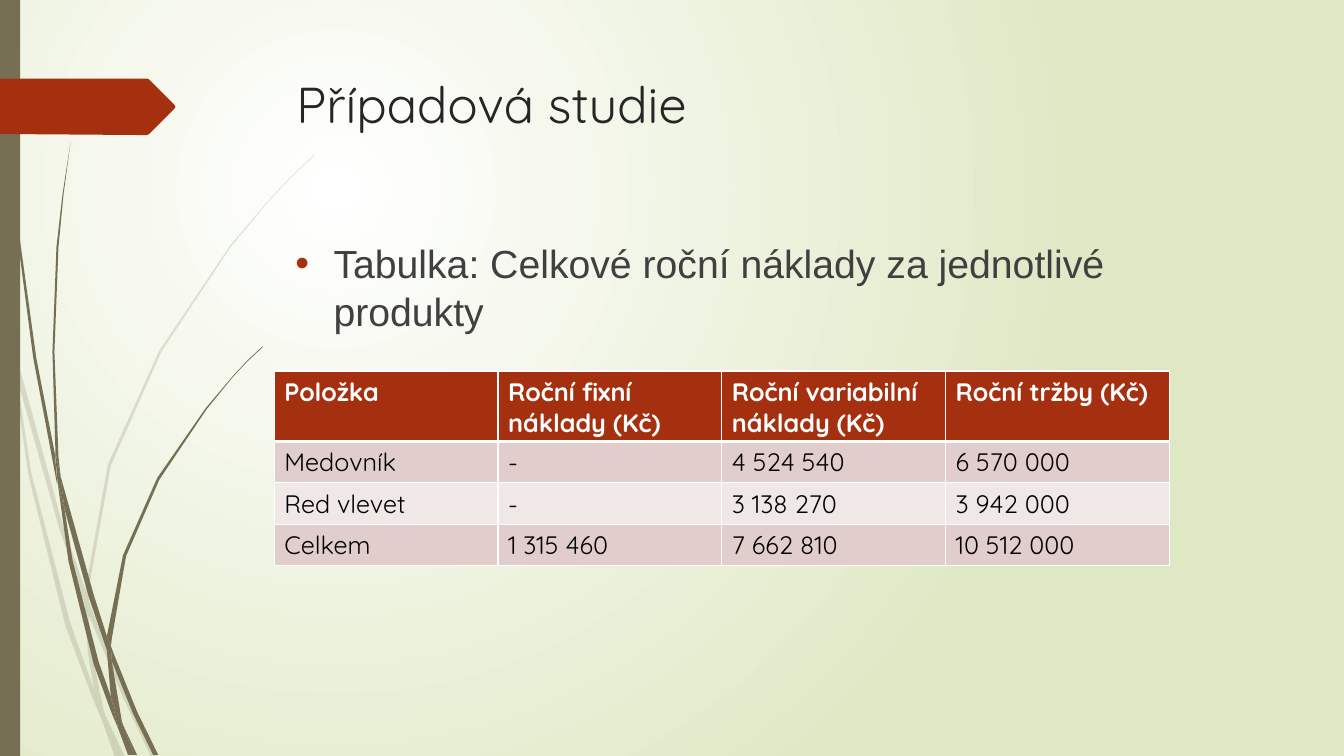
"""Build the case study slide with its yearly cost table."""
from dataclasses import dataclass
from typing import Any

from lxml import etree
from pptx import Presentation
from pptx.dml.color import RGBColor
from pptx.enum import shapes, text
from pptx.oxml import ns
from pptx.util import Emu, Pt

PX = 9144
WHITE = RGBColor(0xFF, 0xFF, 0xFF)
BLACK = RGBColor(0x00, 0x00, 0x00)
LIME = RGBColor(0xDF, 0xE8, 0xC4)
OLIVE = RGBColor(0x76, 0x6F, 0x54)
RUST = RGBColor(0xA5, 0x30, 0x10)
TITLE_GREY = RGBColor(0x26, 0x26, 0x26)
BODY_GREY = RGBColor(0x40, 0x40, 0x40)
ROSE = RGBColor(0xE1, 0xCD, 0xCC)
PALE_ROSE = RGBColor(0xF0, 0xE8, 0xE7)

Points = list[tuple[int, int]]


@dataclass(frozen=True)
class Wisp:
    """A tuft of grass blades sharing one opacity in percent."""
    opacity: int
    blades: list[Points]


@dataclass(frozen=True)
class Label:
    """A text box in px with its font values."""
    left: int
    top: int
    width: int
    height: int
    words: str
    font: dict[str, Any]
    bullet: bool = False


FAINT = Wisp(20, [
    [(11, 350), (9, 322), (0, 282), (0, 299), (10, 344)],
    [(58, 522), (84, 599), (85, 586), (62, 520), (14, 345), (17, 376)],
    [(92, 607), (88, 596), (88, 610), (123, 694), (150, 751), (155, 751), (127, 692)],
    [(119, 751), (124, 751), (105, 711)],
    [(93, 683), (70, 619), (31, 469), (17, 376), (11, 350), (28, 470), (65, 621),
     (92, 693), (101, 714), (99, 707)],
    [(84, 599), (87, 646), (93, 683), (96, 692), (105, 711), (103, 706), (91, 646),
     (88, 610), (88, 608)],
    [(88, 584), (110, 462), (160, 349), (229, 245), (268, 198), (290, 175), (312, 154),
     (312, 153), (289, 175), (268, 197), (228, 244), (158, 348), (107, 461), (85, 584),
     (85, 586), (88, 596)],
    [(101, 714), (114, 751), (119, 751)],
    [(88, 608), (88, 610), (88, 596), (85, 586), (84, 599)],
    [(96, 692), (93, 683), (99, 707), (101, 714), (119, 751), (105, 711)],
])
STRONG = Wisp(100, [
    [(7, 110), (17, 233), (33, 355), (56, 477), (57, 481), (55, 457), (55, 453),
     (36, 355), (19, 232), (8, 109), (5, 48), (4, 0), (3, 0), (4, 48)],
    [(88, 592), (106, 645), (106, 633), (106, 631), (93, 590), (60, 472), (64, 505)],
    [(113, 649), (110, 641), (111, 656), (132, 708), (152, 749), (157, 749), (136, 706)],
    [(110, 691), (98, 657), (72, 556), (64, 505), (57, 477), (68, 557), (93, 659),
     (111, 708), (117, 722), (116, 717)],
    [(60, 472), (58, 453), (54, 349), (58, 245), (63, 193), (70, 141), (62, 193),
     (56, 245), (52, 349), (55, 449)],
    [(133, 749), (136, 749), (122, 719)],
    [(57, 477), (64, 505), (60, 472), (55, 449), (55, 453)],
    [(111, 633), (125, 552), (158, 476), (205, 406), (231, 374), (245, 359), (261, 344),
     (260, 344), (245, 358), (231, 373), (204, 405), (156, 474), (122, 551), (106, 631),
     (110, 641)],
    [(117, 722), (127, 749), (131, 749)],
    [(106, 645), (110, 691), (116, 706), (122, 719), (121, 716), (111, 656), (109, 651)],
    [(106, 645), (109, 651), (111, 656), (110, 641), (106, 631), (106, 633)],
    [(116, 706), (110, 691), (116, 717), (117, 722), (130, 749), (133, 749), (122, 719)],
])
ARROW: Points = [(173, 108), (148, 133), (146, 134), (136, 134), (0, 133), (0, 78),
                 (146, 78), (148, 79), (173, 104), (174, 106)]

LABELS = [
    Label(284, 68, 975, 140, "Případová studie",
          {"name": "Quicksand", "size": Pt(36)}),
    Label(283, 233, 975, 413, "Tabulka: Celkové roční náklady za jednotlivé produkty",
          {"name": "Arial", "size": Pt(28)}, bullet=True),
]
COSTS = [
    ["Položka", "Roční fixní náklady (Kč)", "Roční variabilní náklady (Kč)",
     "Roční tržby (Kč)"],
    ["Medovník", "-", "4 524 540", "6 570 000"],
    ["Red vlevet", "-", "3 138 270", "3 942 000"],
    ["Celkem", "1 315 460", "7 662 810", "10 512 000"],
]


def px(*lengths: int) -> list[Emu]:
    """Turn px lengths into EMU."""
    return [Emu(n * PX) for n in lengths]


def add_node(parent: Any, tag: str, **attrs: Any) -> Any:
    """Append a DrawingML element and return it."""
    return etree.SubElement(parent, ns.qn(tag), {k: str(v) for k, v in attrs.items()})


def paint(sp: Any, colour: RGBColor, opacity: int = 100) -> None:
    """Give a shape a plain fill without line or shadow."""
    sp.shadow.inherit = False
    sp.fill.solid()
    sp.fill.fore_color.rgb = colour
    sp.line.fill.background()
    if opacity < 100:
        srgb = sp.element.spPr.find(f".//{ns.qn('a:srgbClr')}")
        add_node(srgb, "a:alpha", val=opacity * 1000)


def add_outline(target: Any, points: Points) -> Any:
    """Draw a closed outline through px points."""
    builder = target.build_freeform(*points[0], scale=PX)
    builder.add_line_segments(points[1:], close=True)
    return builder.convert_to_shape()


def set_font(font: Any, values: dict[str, Any], colour: RGBColor) -> None:
    """Apply font values and a colour."""
    for name, value in values.items():
        setattr(font, name, value)
    font.color.rgb = colour


def add_background(s: Any) -> None:
    """Fill the background with a radial gradient."""
    fill = s.background.fill
    fill.gradient()
    for stop, position, colour in zip(fill.gradient_stops, (0, 1), (WHITE, LIME)):
        stop.position = position
        stop.color.rgb = colour
    lin = s.element.find(f".//{ns.qn('a:lin')}")
    grad = lin.getparent()
    grad.remove(lin)
    circle = add_node(grad, "a:path", path="circle")
    add_node(circle, "a:fillToRect", l=50000, t=50000, r=100000, b=100000)


def add_label(s: Any, label: Label) -> None:
    """Add a wrapped text box, with a bullet if wanted."""
    box = s.shapes.add_textbox(*px(label.left, label.top, label.width, label.height))
    tf = box.text_frame
    tf.word_wrap = True
    tf.vertical_anchor = text.MSO_ANCHOR.TOP
    p = tf.paragraphs[0]
    if label.bullet:
        pPr = p._p.get_or_add_pPr()
        pPr.set("marL", str(38 * PX))
        pPr.set("indent", str(-38 * PX))
        add_node(add_node(pPr, "a:buClr"), "a:srgbClr", val=RUST)
        add_node(pPr, "a:buFont", typeface="Arial")
        add_node(pPr, "a:buChar", char="•")
    r = p.add_run()
    r.text = label.words
    set_font(r.font, label.font, BODY_GREY if label.bullet else TITLE_GREY)


def add_borders(cell: Any, top: int, bottom: int) -> None:
    """Draw white cell borders with widths in points."""
    tcPr = cell._tc.get_or_add_tcPr()
    for side, width in zip("LRTB", (1, 1, top, bottom)):
        ln = add_node(tcPr, f"a:ln{side}", w=Pt(width))
        add_node(add_node(ln, "a:solidFill"), "a:srgbClr", val=WHITE)


def add_costs(s: Any) -> None:
    """Add the cost table with a header and banded rows."""
    frame = s.shapes.add_table(len(COSTS), len(COSTS[0]), *px(272, 368, 888, 193))
    table = frame.table
    for column in table.columns:
        column.width = Emu(222 * PX)
    for i, values in enumerate(COSTS):
        header = i == 0
        table.rows[i].height = Emu((70 if header else 41) * PX)
        for j, value in enumerate(values):
            cell = table.cell(i, j)
            add_borders(cell, 3 if i == 1 else 1, 3 if header else 1)
            cell.fill.solid()
            cell.fill.fore_color.rgb = RUST if header else (PALE_ROSE, ROSE)[i % 2]
            r = cell.text_frame.paragraphs[0].add_run()
            r.text = value
            set_font(r.font, {"name": "Quicksand", "size": Pt(18), "bold": header},
                     WHITE if header else BLACK)


def main() -> None:
    """Build and save the slide."""
    prs = Presentation()
    prs.slide_width, prs.slide_height = px(1333, 750)
    s = prs.slides.add_slide(prs.slide_layouts[6])
    add_background(s)
    for wisp in (FAINT, STRONG):
        group = s.shapes.add_group_shape()
        for blade in wisp.blades:
            paint(add_outline(group.shapes, blade), OLIVE, wisp.opacity)
    paint(s.shapes.add_shape(shapes.MSO_SHAPE.RECTANGLE, *px(0, 0, 20, 750)), OLIVE)
    paint(add_outline(s.shapes, ARROW), RUST)
    for label in LABELS:
        add_label(s, label)
    add_costs(s)
    prs.save("out.pptx")


if __name__ == "__main__":
    main()
